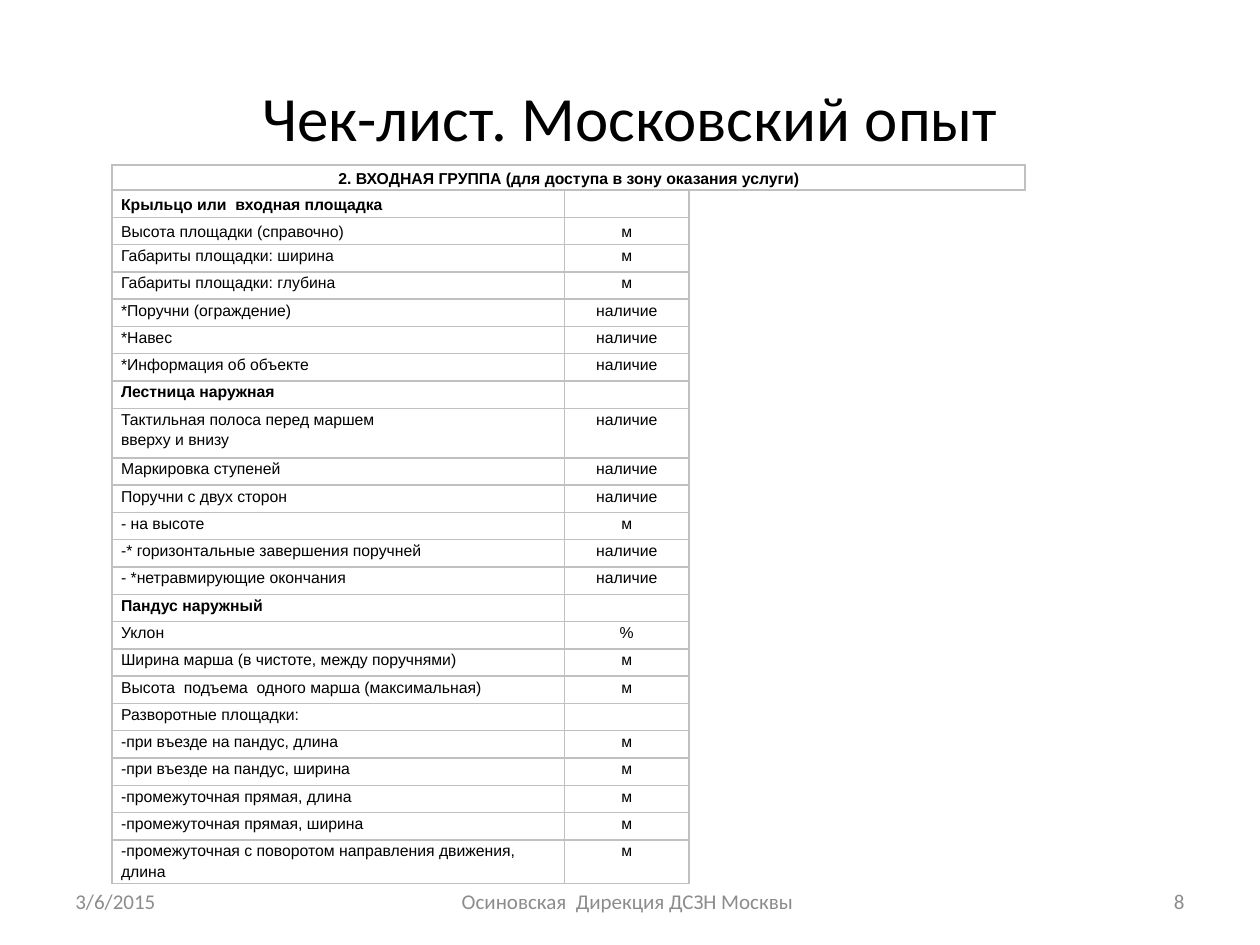
from lxml.etree import SubElement
from pptx import Presentation
from pptx.dml.color import RGBColor
from pptx.enum.text import MSO_ANCHOR, PP_ALIGN
from pptx.oxml.ns import qn
from pptx.util import Cm, Pt

BLACK = RGBColor(0x00, 0x00, 0x00)
GREY = RGBColor(0x8C, 0x8C, 0x8C)
BORDER = RGBColor(0xC0, 0xC0, 0xC0)
NO_STYLE = "{2D5ABB26-0587-4C30-8999-92F81FD0307C}"

HEADING = "2. ВХОДНАЯ ГРУППА (для доступа в зону оказания услуги)"
SECTIONS = {"Крыльцо или  входная площадка", "Лестница наружная", "Пандус наружный"}
CHECKS = [
    ("Крыльцо или  входная площадка", ""),
    ("Высота площадки (справочно)", "м"),
    ("Габариты площадки: ширина", "м"),
    ("Габариты площадки: глубина", "м"),
    ("*Поручни (ограждение)", "наличие"),
    ("*Навес", "наличие"),
    ("*Информация об объекте", "наличие"),
    ("Лестница наружная", ""),
    ("Тактильная полоса перед маршем\nвверху и внизу", "наличие"),
    ("Маркировка ступеней", "наличие"),
    ("Поручни с двух сторон", "наличие"),
    ("- на высоте", "м"),
    ("-* горизонтальные завершения поручней", "наличие"),
    ("- *нетравмирующие окончания", "наличие"),
    ("Пандус наружный", ""),
    ("Уклон", "%"),
    ("Ширина марша (в чистоте, между поручнями)", "м"),
    ("Высота  подъема  одного марша (максимальная)", "м"),
    ("Разворотные площадки:", ""),
    ("-при въезде на пандус, длина", "м"),
    ("-при въезде на пандус, ширина", "м"),
    ("-промежуточная прямая, длина", "м"),
    ("-промежуточная прямая, ширина", "м"),
    ("-промежуточная с поворотом направления движения, длина", "м"),
]


def set_attrs(obj, values):
    """Set every attribute in the dict on the object."""
    for name, value in values.items():
        setattr(obj, name, value)


def format_text(tf, align, name, size, color, bold=False, spacing=1.0):
    """Apply one paragraph and font format to a whole text frame."""
    for p in tf.paragraphs:
        set_attrs(p, {"alignment": align, "line_spacing": spacing})
        for r in p.runs:
            set_attrs(r.font, {"name": name, "size": Pt(size), "bold": bold})
            r.font.color.rgb = color
        if not p.runs:
            SubElement(p._p, qn("a:endParaRPr"), sz=str(size * 100))


def add_label(s, box, text, align, size, color):
    """Place a vertically centred text box."""
    tf = s.shapes.add_textbox(*map(Cm, box)).text_frame
    set_attrs(tf, {"text": text, "word_wrap": True,
                   "vertical_anchor": MSO_ANCHOR.MIDDLE})
    format_text(tf, align, "Calibri", size, color)


def add_borders(cell, sides):
    """Draw thin grey borders on the named sides of a cell."""
    tcPr = cell._tc.get_or_add_tcPr()
    for side in sides:
        ln = SubElement(tcPr, qn(f"a:ln{side}"), w=str(Pt(1)))
        fill = SubElement(ln, qn("a:solidFill"))
        SubElement(fill, qn("a:srgbClr"), val=str(BORDER))


def fill_cell(cell, text, align, bold, anchor, sides):
    """Write and format one table cell."""
    set_attrs(cell, {"text": text, "vertical_anchor": anchor,
                     "margin_left": Cm(0.18), "margin_right": Cm(0.18),
                     "margin_top": 0, "margin_bottom": 0})
    format_text(cell.text_frame, align, "Arial", 9, BLACK, bold, 1.15)
    add_borders(cell, sides)
    cell.fill.background()


def add_checklist(s, box):
    """Build the checklist table inside the box."""
    widths = [9.12, 2.51, 2.26, 2.26, 2.26]
    heights = [0.5] + [1.0 if "\n" in name else 0.55 for name, _ in CHECKS]
    frame = s.shapes.add_table(len(heights), len(widths), *map(Cm, box))
    table = frame.table
    set_attrs(table, {"first_row": False, "horz_banding": False})
    table._tbl.tblPr.find(qn("a:tableStyleId")).text = NO_STYLE
    for column, width in zip(table.columns, widths):
        column.width = Cm(width)
    for row, height in zip(table.rows, heights):
        row.height = Cm(height)

    rows = [(HEADING, "")] + CHECKS
    for i, values in enumerate(rows):
        anchor = MSO_ANCHOR.MIDDLE if i < 3 else MSO_ANCHOR.TOP
        for j in range(len(widths)):
            text = values[j] if j < 2 else ""
            align = PP_ALIGN.CENTER if i == 0 or j else PP_ALIGN.LEFT
            sides = "LRTB" if i == 0 or j < 2 else ""
            bold = i == 0 or text in SECTIONS
            fill_cell(table.cell(i, j), text, align, bold, anchor, sides)
    table.cell(0, 0).merge(table.cell(0, len(widths) - 1))


def add_footer(s, box):
    """Place date, organisation and page number along the box."""
    left, top, width, height = box
    side, middle = 5.93, 8.04
    parts = [
        ("3/6/2015", left, side, PP_ALIGN.LEFT),
        ("Осиновская  Дирекция ДСЗН Москвы ", left + (width - middle) / 2,
         middle, PP_ALIGN.CENTER),
        ("8", left + width - side, side, PP_ALIGN.RIGHT),
    ]
    for text, x, w, align in parts:
        add_label(s, (x, top, w, height), text, align, 12, GREY)


def main():
    """Build the checklist slide and save it."""
    prs = Presentation()
    set_attrs(prs, {"slide_width": Cm(25.4), "slide_height": Cm(19.05)})
    s = prs.slides.add_slide(prs.slide_layouts[6])
    add_label(s, (1.27, 0.76, 22.86, 3.18), "Чек-лист. Московский опыт",
              PP_ALIGN.CENTER, 36, BLACK)
    add_checklist(s, (2.26, 3.33, 18.41, 14.53))
    add_footer(s, (1.27, 17.66, 22.86, 1.01))
    prs.save("out.pptx")


if __name__ == "__main__":
    main()
